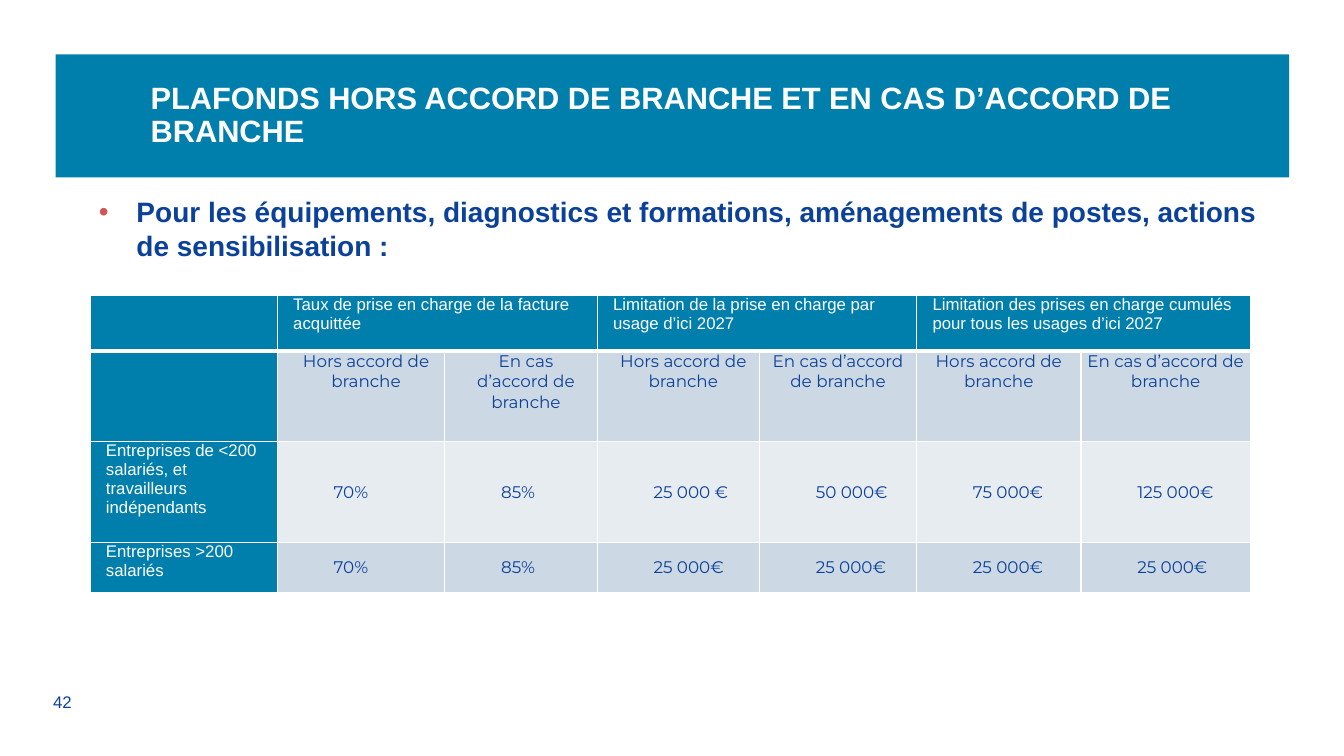
from dataclasses import dataclass

from lxml import etree
from pptx import Presentation
from pptx.dml.color import RGBColor
from pptx.enum.shapes import MSO_SHAPE
from pptx.enum.text import MSO_ANCHOR, PP_ALIGN
from pptx.oxml.ns import qn
from pptx.util import Cm, Pt

RECTANGLE = MSO_SHAPE.RECTANGLE
TOP, MIDDLE = MSO_ANCHOR.TOP, MSO_ANCHOR.MIDDLE
LEFT, CENTER = PP_ALIGN.LEFT, PP_ALIGN.CENTER


@dataclass(frozen=True)
class Theme:
    teal: str = "007FAD"
    navy: str = "0C419A"
    white: str = "FFFFFF"
    red: str = "D05559"
    band_dark: str = "CCD8E3"
    band_light: str = "E7ECF1"
    text_font: str = "Arial"
    figure_font: str = "Montserrat"
    title_size: int = 22
    lead_size: int = 20
    body_size: int = 12


THEME = Theme()

COLUMN_WIDTHS = [4.72, 4.22, 3.84, 4.09, 3.96, 4.14, 4.27]
ROW_HEIGHTS = [1.4, 2.29, 2.54, 1.27]
GROUPS = [
    "Taux de prise en charge de la facture acquittée",
    "Limitation de la prise en charge par usage d’ici 2027",
    "Limitation des prises en charge cumulés pour tous les usages d’ici 2027",
]
CASES = ["Hors accord de branche", "En cas d’accord de branche"]
COMPANIES = [
    ("Entreprises de <200 salariés, et travailleurs indépendants", THEME.band_light,
     ["70%", "85%", "25 000 €", "50 000€", "75 000€", "125 000€"]),
    ("Entreprises >200 salariés", THEME.band_dark,
     ["70%", "85%", "25 000€", "25 000€", "25 000€", "25 000€"]),
]


def write(frame, text, *, size=THEME.body_size, color=THEME.white, font=THEME.text_font,
          bold=False, align=LEFT, indent=0, hanging=0, bullet=None, spacing=None):
    """Fill a text frame with one paragraph; indents are in centimetres."""
    frame.word_wrap = True
    para = frame.paragraphs[0]
    properties = para._p.get_or_add_pPr()
    properties.set("marL", str(Cm(indent)))
    properties.set("indent", str(Cm(-hanging)))
    if bullet:
        bullet_color = etree.SubElement(properties, qn("a:buClr"))
        etree.SubElement(bullet_color, qn("a:srgbClr"), val=bullet)
        etree.SubElement(properties, qn("a:buFont"), typeface=font)
        etree.SubElement(properties, qn("a:buChar"), char="•")
    para.alignment = align
    if spacing:
        para.line_spacing = spacing
    span = para.add_run()
    span.text = text
    span.font.size = Pt(size)
    span.font.name = font
    span.font.bold = bold
    span.font.color.rgb = RGBColor.from_string(color)


def paint_cell(cell, fill, bottom=1):
    """Set the white borders, then the fill, in the order the schema asks for."""
    properties = cell._tc.get_or_add_tcPr()
    for side, width in (("L", 1), ("R", 1), ("T", 1), ("B", bottom)):
        line = etree.SubElement(properties, qn(f"a:ln{side}"), w=str(Pt(width)))
        solid = etree.SubElement(line, qn("a:solidFill"))
        etree.SubElement(solid, qn("a:srgbClr"), val=THEME.white)
    cell.fill.solid()
    cell.fill.fore_color.rgb = RGBColor.from_string(fill)
    cell.margin_left = cell.margin_right = Cm(0.15)
    cell.margin_top = cell.margin_bottom = 0


class Page:
    """The current slide and the style applied to its elements."""

    def __init__(self, deck, theme):
        self.slide = deck.slides.add_slide(deck.slide_layouts[6])
        self.theme = theme

    def banner(self, left, top, width, height, text):
        box = self.slide.shapes.add_shape(RECTANGLE, Cm(left), Cm(top), Cm(width), Cm(height))
        box.shadow.inherit = False
        box.fill.solid()
        box.fill.fore_color.rgb = RGBColor.from_string(self.theme.teal)
        box.line.fill.background()
        frame = box.text_frame
        frame.vertical_anchor = MIDDLE
        frame.margin_left = Cm(2.4)
        frame.margin_right = frame.margin_top = frame.margin_bottom = Cm(0.2)
        write(frame, text, size=self.theme.title_size, bold=True, spacing=0.9)

    def text(self, left, top, width, height, text, anchor=TOP, **style):
        box = self.slide.shapes.add_textbox(Cm(left), Cm(top), Cm(width), Cm(height))
        box.text_frame.vertical_anchor = anchor
        write(box.text_frame, text, color=self.theme.navy, **style)

    def table(self, left, top, widths, heights):
        frame = self.slide.shapes.add_table(
            len(heights), len(widths), Cm(left), Cm(top), Cm(sum(widths)), Cm(sum(heights)))
        table = frame.table
        table.first_row = table.horz_banding = False
        for column, width in zip(table.columns, widths):
            column.width = Cm(width)
        for row, height in zip(table.rows, heights):
            row.height = Cm(height)
        return table

    def ceilings(self, left, top):
        """Table of funding ceilings by company size."""
        theme = self.theme
        table = self.table(left, top, COLUMN_WIDTHS, ROW_HEIGHTS)
        row_fills = [theme.teal, theme.band_dark] + [fill for _, fill, _ in COMPANIES]
        for row, fill in enumerate(row_fills):
            for column in range(len(COLUMN_WIDTHS)):
                paint_cell(table.cell(row, column), fill if column else theme.teal,
                           bottom=1 if row else 3)

        figure_style = {"color": theme.navy, "font": theme.figure_font}
        for group, heading in enumerate(GROUPS):
            first = 1 + 2 * group
            table.cell(0, first).merge(table.cell(0, first + 1))
            write(table.cell(0, first).text_frame, heading, indent=0.25)
            for column, case in enumerate(CASES, first):
                write(table.cell(1, column).text_frame, case, align=CENTER,
                      indent=0.25 if column < 4 else 0, **figure_style)

        for row, (company, _, figures) in enumerate(COMPANIES, 2):
            write(table.cell(row, 0).text_frame, company, indent=0.25)
            for column, figure in enumerate(figures, 1):
                cell = table.cell(row, column)
                cell.vertical_anchor = MIDDLE
                write(cell.text_frame, figure, indent=1.27, **figure_style)


def main():
    deck = Presentation()
    deck.slide_width, deck.slide_height = Cm(33.87), Cm(19.05)
    page = Page(deck, THEME)
    page.text(1.09, 17.3, 2.01, 0.79, "42", anchor=MIDDLE)
    page.banner(1.4, 1.37, 31.09, 3.1,
                "PLAFONDS HORS ACCORD DE BRANCHE ET EN CAS D’ACCORD DE BRANCHE")
    page.ceilings(2.27, 7.44)
    page.text(2.24, 4.78, 30.25, 1.96,
              "Pour les équipements, diagnostics et formations, aménagements de postes, "
              "actions de sensibilisation :",
              size=THEME.lead_size, bold=True, indent=0.95, hanging=0.95, bullet=THEME.red)
    deck.save("out.pptx")


if __name__ == "__main__":
    main()
